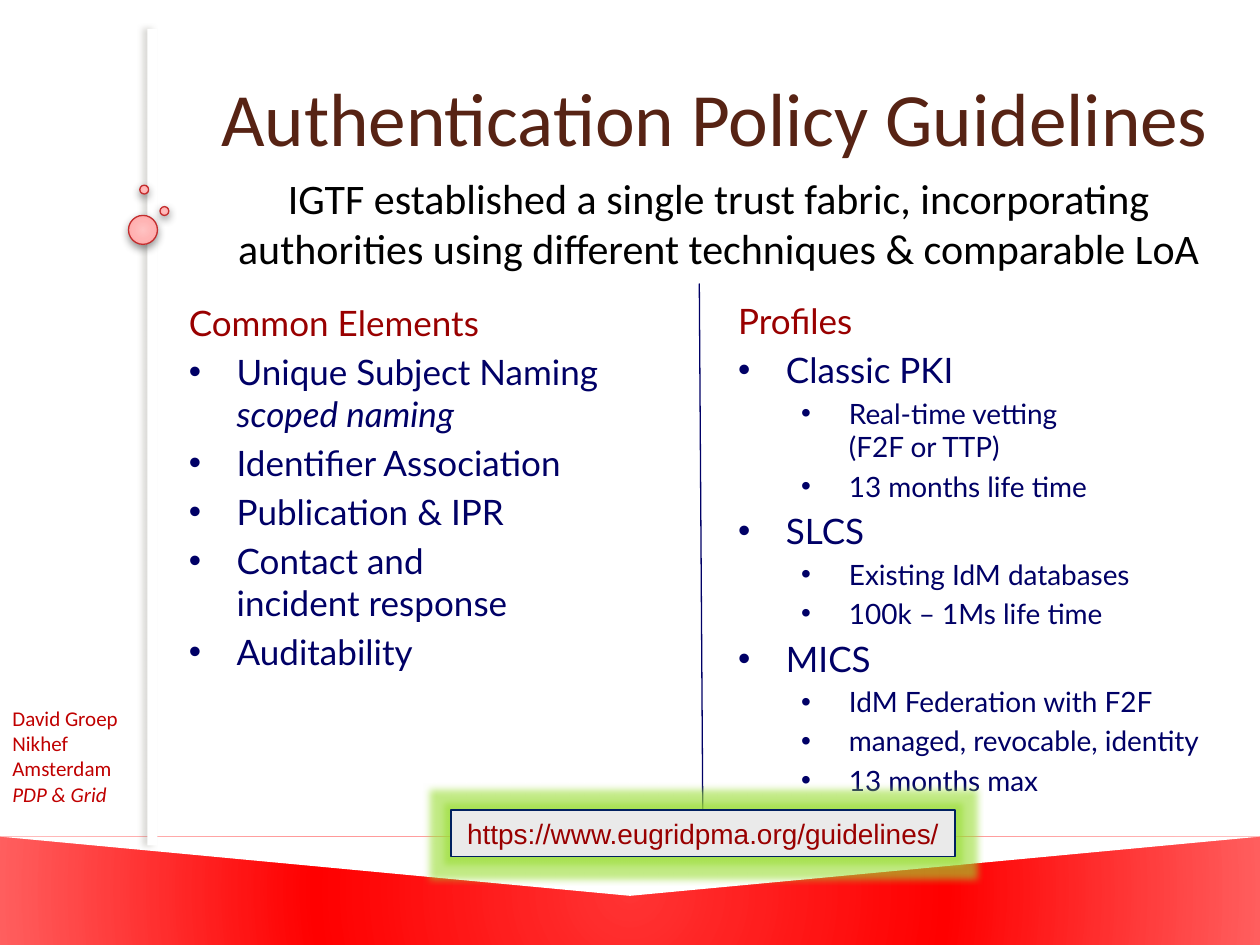
from dataclasses import dataclass
from lxml.etree import SubElement
from pptx import Presentation
from pptx.dml.color import RGBColor
from pptx.enum.shapes import MSO_CONNECTOR, MSO_SHAPE
from pptx.enum.text import MSO_ANCHOR, PP_ALIGN
from pptx.oxml.ns import qn
from pptx.util import Inches, Pt


@dataclass(frozen=True)
class Theme:
    head: str = "572314"
    body: str = "000000"
    list: str = "000066"
    label: str = "990000"
    side: str = "C00000"
    white: str = "FFFFFF"
    panel: str = "EAEAEA"
    edge: str = "002060"
    rim: str = "C32D2E"
    glow: str = "99DD33"
    band: tuple = ((0, "FF0000", 79), (50, "FF0000", 100), (100, "FF0000", 62))
    dot: tuple = ((0, "FFC2C2", 100), (50, "FFB4B4", 100),
                  (97, "FF9C9C", 100), (100, "FF9595", 100))
    main: str = "Calibri"
    text: str = "Lato"
    link: str = "Arial"
    huge: int = 43
    large: int = 24
    base: int = 20
    small: int = 16
    tiny: int = 12


T = Theme()
TITLE = "Authentication Policy Guidelines"
INTRO = ("IGTF established a single trust fabric, incorporating "
         "authorities using different techniques & comparable LoA")
AUTHOR = ["David Groep", "Nikhef\nAmsterdam", "PDP & Grid"]
LINK = "https://www.eugridpma.org/guidelines/"
SLANT = {"scoped naming", "PDP & Grid"}
LISTS = [
    ((1.4, 2.34, 4.13, 4.73), "Common Elements", [
        ("Unique Subject Naming\nscoped naming", []),
        ("Identifier Association", []),
        ("Publication & IPR", []),
        ("Contact and\nincident response", []),
        ("Auditability", []),
    ]),
    ((5.76, 2.33, 4.13, 4.73), "Profiles", [
        ("Classic PKI", ["Real-time vetting\n(F2F or TTP)", "13 months life time"]),
        ("SLCS", ["Existing IdM databases", "100k – 1Ms life time"]),
        ("MICS", ["IdM Federation with F2F", "managed, revocable, identity",
                  "13 months max"]),
    ]),
]
DOTS = [(1.11, 1.47, 0.07), (1.02, 1.71, 0.23), (1.27, 1.64, 0.07)]


def color(node, value, alpha):
    item = SubElement(node, qn("a:srgbClr"), val=value)
    SubElement(item, qn("a:alpha"), val=str(alpha * 1000))


def effect(shape, kind, value, alpha, **attrs):
    fx = SubElement(shape._element.spPr, qn("a:effectLst"))
    names = {key: str(val) for key, val in attrs.items()}
    color(SubElement(fx, qn("a:" + kind), **names), value, alpha)


def radial(shape, stops):
    shape.fill.gradient()
    grad = shape._element.spPr.find(qn("a:gradFill"))
    for child in list(grad):
        grad.remove(child)
    rows = SubElement(grad, qn("a:gsLst"))
    for pos, value, alpha in stops:
        color(SubElement(rows, qn("a:gs"), pos=str(pos * 1000)), value, alpha)
    ring = SubElement(grad, qn("a:path"), path="circle")
    SubElement(ring, qn("a:fillToRect"), l="50000", t="50000", r="50000", b="50000")


def shape(kind, at, fill=None, line=None, stops=None, shadow=True):
    item = slide.shapes.add_shape(kind, *map(Inches, at))
    if stops:
        radial(item, stops)
    else:
        item.fill.solid()
        item.fill.fore_color.rgb = RGBColor.from_string(fill)
    if line:
        item.line.color.rgb = RGBColor.from_string(line)
        item.line.width = Pt(0.75)
    else:
        item.line.fill.background()
    if shadow:
        item.shadow.inherit = False
    return item


def textbox(at, anchor=MSO_ANCHOR.TOP):
    frame = slide.shapes.add_textbox(*map(Inches, at)).text_frame
    frame.word_wrap = True
    frame.vertical_anchor = anchor
    return frame


def text(frame, words, size, ink, font=T.main, align=PP_ALIGN.LEFT, level=None, gap=0):
    first = not frame.paragraphs[0].runs
    para = frame.paragraphs[0] if first else frame.add_paragraph()
    para.alignment = align
    if level is not None:
        para.level = level
        props = para._p.get_or_add_pPr()
        props.set("marL", str(Inches(0.38 + 0.5 * level)))
        props.set("indent", str(Inches(-0.38)))
        SubElement(props, qn("a:buFont"), typeface="Arial")
        SubElement(props, qn("a:buChar"), char="•")
    if not first:
        para.space_before = Pt(size * gap)
    for num, part in enumerate(words.split("\n")):
        if num:
            para.add_line_break()
        run = para.add_run()
        run.text = part
        run.font.name = font
        run.font.size = Pt(size)
        run.font.italic = part in SLANT
        run.font.color.rgb = RGBColor.from_string(ink)


deck = Presentation()
deck.slide_width, deck.slide_height = Inches(10), Inches(7.5)
slide = deck.slides.add_slide(deck.slide_layouts[6])

side = textbox((0, 5.55, 1.71, 1.15))
for words in AUTHOR:
    text(side, words, T.tiny, T.side)

shape(MSO_SHAPE.RECTANGLE, (0, 6.64, 10, 0.86), stops=T.band)
shape(MSO_SHAPE.ISOSCELES_TRIANGLE, (0, 6.64, 10, 0.47), T.white).rotation = 180
strip = shape(MSO_SHAPE.RECTANGLE, (1.17, 0.23, 0.08, 6.48), T.white, shadow=False)
effect(strip, "outerShdw", "736F63", 25, blurRad=Pt(3), dist=Pt(3), dir=180 * 60000)
for left, top, size in DOTS:
    dot = shape(MSO_SHAPE.OVAL, (left, top, size, size), line=T.rim, stops=T.dot, shadow=False)
    effect(dot, "outerShdw", "000000", 43, blurRad=Pt(5), dist=Pt(2), dir=90 * 60000)

text(textbox((1.57, 0.3, 8.2, 1.25), MSO_ANCHOR.MIDDLE), TITLE, T.huge, T.head,
     align=PP_ALIGN.CENTER)
text(textbox((1.77, 1.32, 7.87, 1.03)), INTRO, T.large, T.body, align=PP_ALIGN.CENTER)

for at, label, items in LISTS:
    frame = textbox(at)
    text(frame, label, T.base, T.label, font=T.text)
    for item, subs in items:
        text(frame, item, T.base, T.list, font=T.text, level=0, gap=0.2)
        for sub in subs:
            text(frame, sub, T.small, T.list, font=T.text, level=1, gap=0.2)

rule = slide.shapes.add_connector(
    MSO_CONNECTOR.STRAIGHT, Inches(5.55), Inches(2.25), Inches(5.58), Inches(6.8))
rule.line.color.rgb = RGBColor.from_string(T.list)
rule.line.width = Pt(0.75)
SubElement(rule._element.spPr, qn("a:effectLst"))

link = shape(MSO_SHAPE.RECTANGLE, (3.58, 6.43, 4, 0.37), T.panel, T.edge, shadow=False)
effect(link, "glow", T.glow, 60, rad=Pt(8))
link.text_frame.word_wrap = False
text(link.text_frame, LINK, T.small, T.label, font=T.link, align=PP_ALIGN.CENTER)
rule.end_connect(link, 2)

deck.save("out.pptx")
